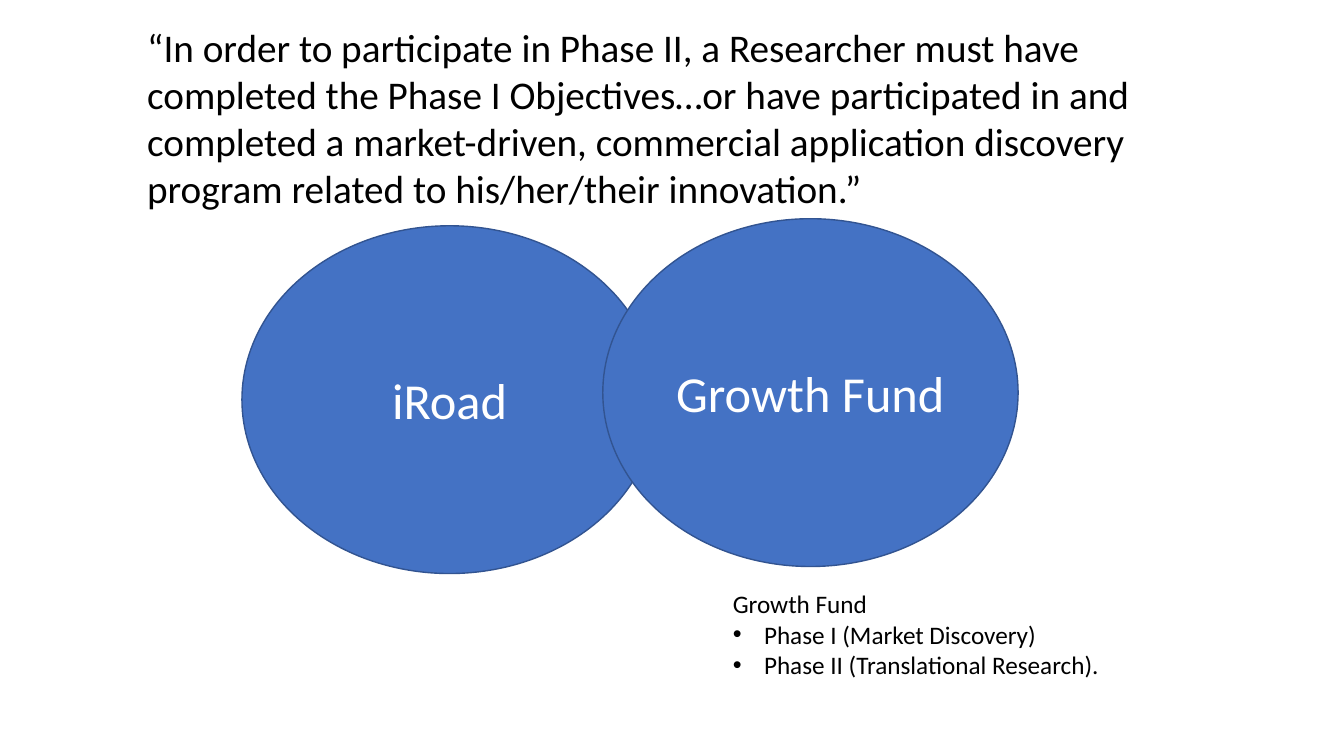
from dataclasses import dataclass

from lxml import etree
from pptx import Presentation
from pptx.dml.color import RGBColor
from pptx.enum.shapes import MSO_SHAPE
from pptx.enum.text import MSO_ANCHOR, MSO_AUTO_SIZE, PP_ALIGN
from pptx.oxml.ns import qn
from pptx.util import Inches, Pt

CIRCLE = MSO_SHAPE.FLOWCHART_CONNECTOR
TOP, MIDDLE = MSO_ANCHOR.TOP, MSO_ANCHOR.MIDDLE
LEFT, CENTER = PP_ALIGN.LEFT, PP_ALIGN.CENTER
NO_AUTOFIT = MSO_AUTO_SIZE.NONE
TITLE_AND_CONTENT = 1

# Slide grid
WIDTH, HEIGHT = Inches(13.333), Inches(7.5)
COLUMNS, ROWS = 40, 30


@dataclass(frozen=True)
class Theme:
    font: str = "Calibri"
    ink: RGBColor = RGBColor(0x00, 0x00, 0x00)
    paper: RGBColor = RGBColor(0xFF, 0xFF, 0xFF)
    circle: RGBColor = RGBColor(0x44, 0x72, 0xC4)
    outline: RGBColor = RGBColor(0x32, 0x54, 0x91)
    label_size: int = 36
    quote_size: int = 28
    list_size: int = 18
    outline_width: int = 1
    bullet_indent: float = 0.31


THEME = Theme()

QUOTE = (
    "“In order to participate in Phase II, a Researcher must have completed "
    "the Phase I Objectives…or have participated in and completed a "
    "market-driven, commercial application discovery program related to "
    "his/her/their innovation.”"
)
FUND = "Growth Fund"
PHASES = ["Phase I (Market Discovery)", "Phase II (Translational Research)."]

# Programs with the column and row where each circle starts
PROGRAMS = [("iRoad", 7.2, 8.96), (FUND, 17.94, 8.68)]
CIRCLE_SPAN = (12.36, 13.8)


def grid_box(column, row, columns, rows):
    """Turn grid cells into left, top, width and height."""
    return (
        round(WIDTH * column / COLUMNS),
        round(HEIGHT * row / ROWS),
        round(WIDTH * columns / COLUMNS),
        round(HEIGHT * rows / ROWS),
    )


def apply_format(target, values):
    for attribute, value in values.items():
        setattr(target, attribute, value)


def format_paragraph(paragraph, size, color, alignment):
    apply_format(paragraph, {
        "alignment": alignment,
        "space_before": Pt(0),
        "line_spacing": 1.0,
    })
    apply_format(paragraph.font, {"name": THEME.font, "size": Pt(size)})
    paragraph.font.color.rgb = color


def set_bullet(paragraph, bulleted):
    indent = Inches(THEME.bullet_indent) if bulleted else 0
    properties = paragraph._p.get_or_add_pPr()
    properties.set("marL", str(indent))
    properties.set("indent", str(-indent))
    if bulleted:
        etree.SubElement(properties, qn("a:buFont")).set("typeface", "Arial")
        etree.SubElement(properties, qn("a:buChar")).set("char", "•")
    else:
        etree.SubElement(properties, qn("a:buNone"))


def place_text(placeholder, box, lines, size):
    apply_format(placeholder, dict(zip(("left", "top", "width", "height"), box)))
    frame = placeholder.text_frame
    frame.text = "\n".join(lines)
    apply_format(frame, {
        "word_wrap": True,
        "auto_size": NO_AUTOFIT,
        "vertical_anchor": TOP,
    })
    for paragraph in frame.paragraphs:
        format_paragraph(paragraph, size, THEME.ink, LEFT)
    return frame.paragraphs


def add_program_circle(slide, name, column, row):
    circle = slide.shapes.add_shape(CIRCLE, *grid_box(column, row, *CIRCLE_SPAN))
    circle.shadow.inherit = False
    circle.fill.solid()
    circle.fill.fore_color.rgb = THEME.circle
    circle.line.color.rgb = THEME.outline
    circle.line.width = Pt(THEME.outline_width)
    frame = circle.text_frame
    frame.text = name
    apply_format(frame, {"word_wrap": True, "vertical_anchor": MIDDLE})
    format_paragraph(frame.paragraphs[0], THEME.label_size, THEME.paper, CENTER)


def main():
    deck = Presentation()
    apply_format(deck, {"slide_width": WIDTH, "slide_height": HEIGHT})
    slide = deck.slides.add_slide(deck.slide_layouts[TITLE_AND_CONTENT])
    slide.background.fill.solid()
    slide.background.fill.fore_color.rgb = THEME.paper

    # Eligibility quote
    place_text(slide.shapes.title, grid_box(4.08, 0.72, 33.36, 7.96),
               [QUOTE], THEME.quote_size)

    # Overlapping programs
    for name, column, row in PROGRAMS:
        add_program_circle(slide, name, column, row)

    # Phases of the fund
    fund_lines = place_text(slide.placeholders[1],
                            grid_box(21.51, 23.16, 17.07, 4.04),
                            [FUND, *PHASES], THEME.list_size)
    for position, line in enumerate(fund_lines):
        set_bullet(line, bulleted=position > 0)

    deck.save("out.pptx")


if __name__ == "__main__":
    main()
